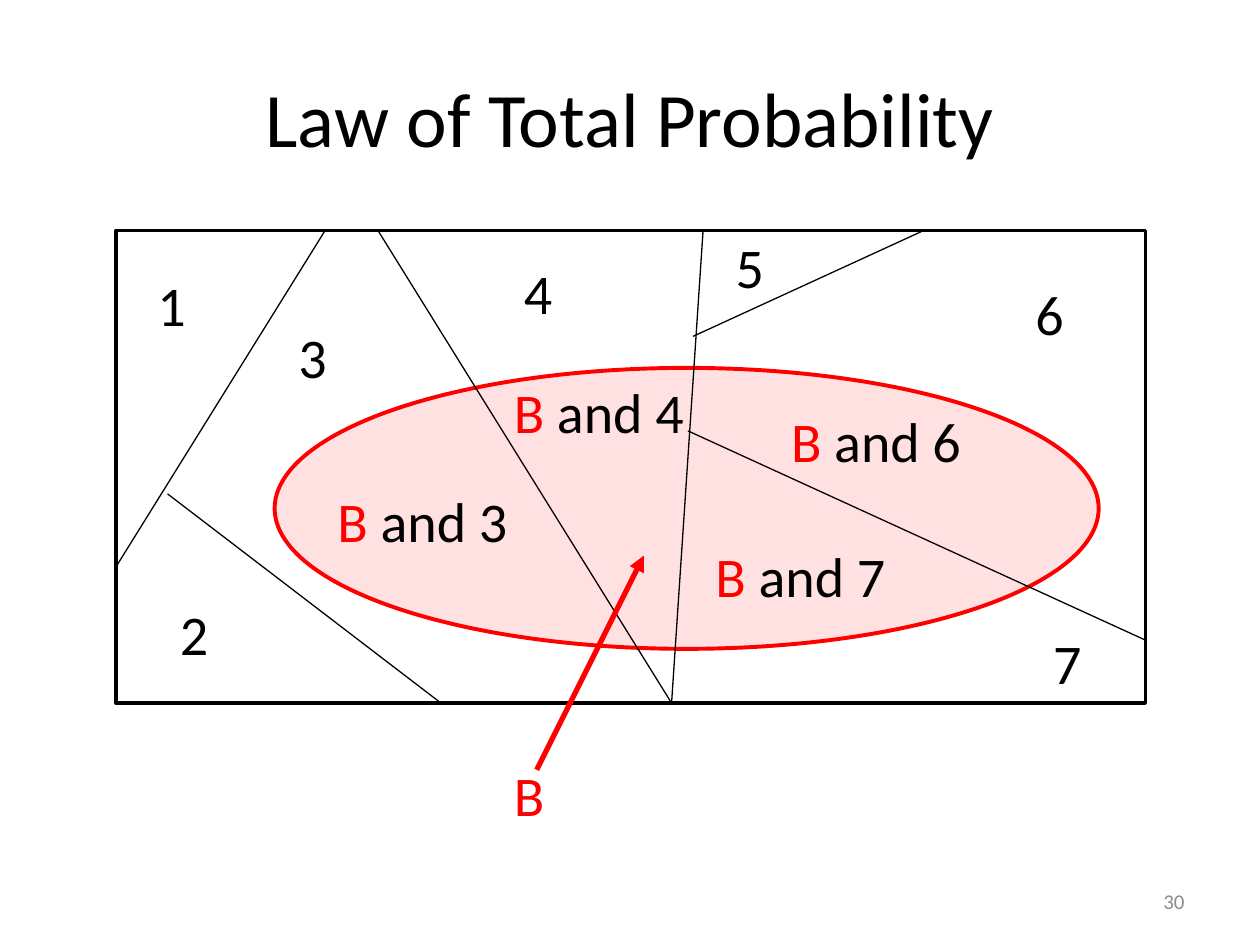
from lxml.etree import SubElement
from pptx import Presentation
from pptx.dml.color import RGBColor
from pptx.enum.shapes import MSO_CONNECTOR as Link, MSO_SHAPE as Kind
from pptx.enum.text import MSO_ANCHOR as Anchor, MSO_AUTO_SIZE as Auto, PP_ALIGN as Align
from pptx.oxml.ns import qn
from pptx.util import Inches, Pt

BLACK = RGBColor(0, 0, 0)
RED = RGBColor(255, 0, 0)
PINK = RGBColor(255, 225, 225)
GRAY = RGBColor(140, 140, 140)
FACE = "Calibri"

LEFT, TOP, RIGHT, BASE = 0.92, 1.83, 9.09, 5.58
CUTS = [
    (2.58, TOP, LEFT, 4.5),
    (3, TOP, 5.33, BASE),
    (5.58, TOP, 5.33, BASE),
    (1.33, 3.92, 3.5, BASE),
    (5.5, 2.67, 7.33, TOP),
    (5.46, 3.42, RIGHT, 5.08),
]
PARTS = [
    ("1", 1.15, 2.1),
    ("2", 1.33, 4.71),
    ("3", 2.27, 2.51),
    ("4", 4.06, 2),
    ("5", 5.74, 1.8),
    ("6", 8.12, 2.17),
    ("7", 8.26, 4.94),
]
JOINTS = [
    (" and 3", 2.58, 3.81),
    (" and 4", 3.98, 2.95),
    (" and 6", 6.18, 3.18),
    (" and 7", 5.58, 4.25),
]


def style(para, size, color, align=Align.LEFT):
    para.alignment = align
    para.font.name = FACE
    para.font.size = Pt(size)
    para.font.color.rgb = color


def add_title(slide, text):
    title = slide.shapes.title
    title.left, title.top = Inches(0.5), Inches(0.3)
    title.width, title.height = Inches(9), Inches(1.25)
    frame = title.text_frame
    frame.text = text
    frame.vertical_anchor = Anchor.MIDDLE
    style(frame.paragraphs[0], 44, BLACK, Align.CENTER)


def add_number(slide, text):
    box = slide.shapes.add_textbox(Inches(7.17), Inches(6.95), Inches(2.33), Inches(0.4))
    frame = box.text_frame
    frame.word_wrap = True
    frame.vertical_anchor = Anchor.MIDDLE
    frame.text = text
    style(frame.paragraphs[0], 12, GRAY, Align.RIGHT)


def add_area(slide, kind, x, y, wide, high, color, weight, fill=None):
    area = slide.shapes.add_shape(kind, Inches(x), Inches(y), Inches(wide), Inches(high))
    area.shadow.inherit = False
    if fill is None:
        area.fill.background()
    else:
        area.fill.solid()
        area.fill.fore_color.rgb = fill
    area.line.color.rgb = color
    area.line.width = Pt(weight)


def add_line(slide, ends, color, weight, arrow=False):
    line = slide.shapes.add_connector(Link.STRAIGHT, *map(Inches, ends))
    line.line.color.rgb = color
    line.line.width = Pt(weight)
    SubElement(line._element.spPr, qn("a:effectLst"))
    if arrow:
        SubElement(line.line._get_or_add_ln(), qn("a:tailEnd"), type="triangle")


def add_label(slide, x, y, wide, event="", rest=""):
    box = slide.shapes.add_textbox(Inches(x), Inches(y), Inches(wide), Inches(0.64))
    frame = box.text_frame
    frame.word_wrap = False
    frame.auto_size = Auto.SHAPE_TO_FIT_TEXT
    para = frame.paragraphs[0]
    style(para, 32, BLACK)
    for text, color in ((event, RED), (rest, BLACK)):
        if text:
            run = para.add_run()
            run.text = text
            run.font.color.rgb = color


def main():
    deck = Presentation()
    deck.slide_width, deck.slide_height = Inches(10), Inches(7.5)
    slide = deck.slides.add_slide(deck.slide_layouts[5])
    add_area(slide, Kind.OVAL, 2.18, 2.92, 6.54, 2.23, RED, 2.25, PINK)
    add_title(slide, "Law of Total Probability")
    add_number(slide, "30")
    add_area(slide, Kind.RECTANGLE, LEFT, TOP, RIGHT - LEFT, BASE - TOP, BLACK, 2)
    for ends in CUTS:
        add_line(slide, ends, BLACK, 0.75)
    for text, x, y in PARTS:
        add_label(slide, x, y, 0.43, rest=text)
    for text, x, y in JOINTS:
        add_label(slide, x, y, 1.57, "B", text)
    add_label(slide, 3.98, 5.99, 0.45, "B")
    add_line(slide, (4.26, 6.11, 5.11, 4.41), RED, 3, arrow=True)
    deck.save("out.pptx")


if __name__ == "__main__":
    main()
